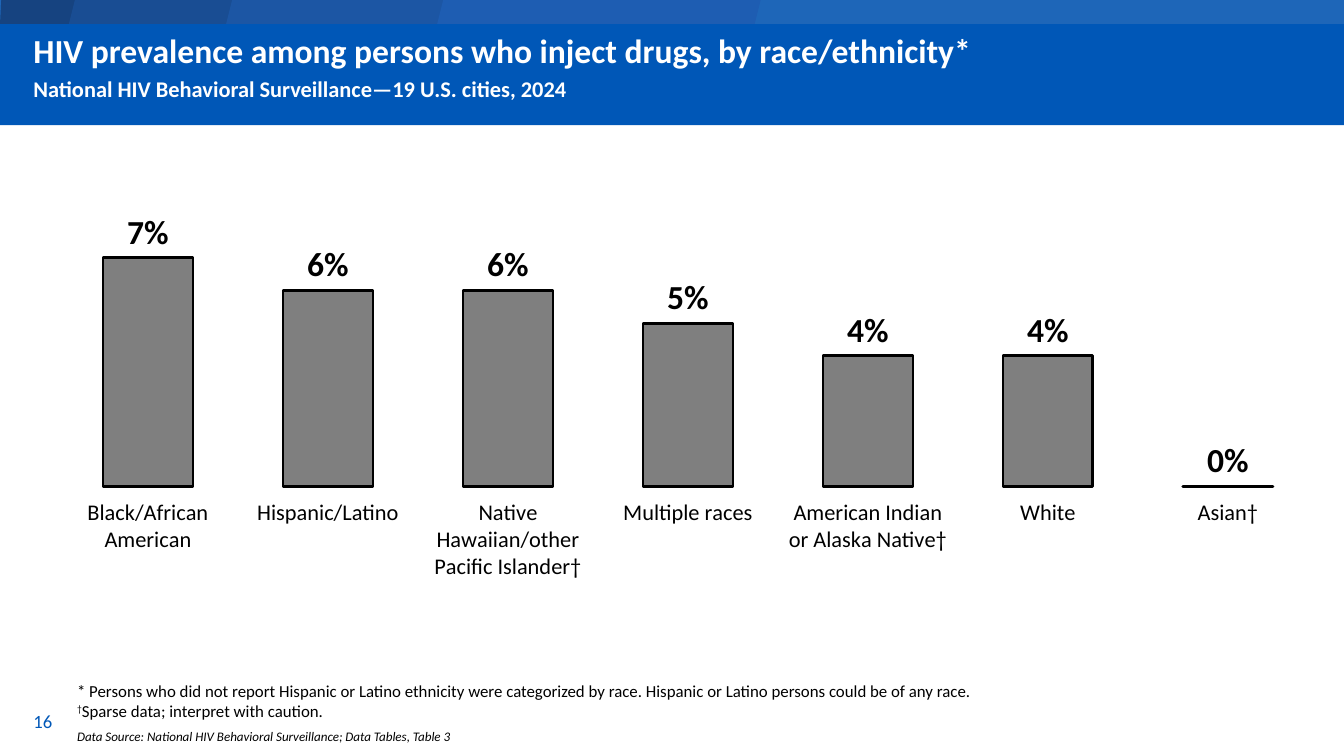
from lxml import etree
from pptx import Presentation
from pptx import util as u
from pptx.chart import data as chart_data
from pptx.dml.color import RGBColor
from pptx.enum import chart as charts, shapes, text
from pptx.oxml import ns

WIDTH = u.Inches(10)
HEIGHT = u.Emu(WIDTH * 9 // 16)
FONT = "Calibri"
COLORS = {
    "white": "FFFFFF", "black": "000000", "bar": "7F7F7F", "header": "0057B7",
    "strip": "1E66B8", "band1": "164380", "band2": "194D93",
    "band3": "1C56A4", "band4": "1E5DB2",
}
STRIP_HEIGHT = 3.38
BANDS = [(5.1, 15.3, "band2"), (16.8, 20, "band3"), (32.5, 24.1, "band4")]
PREVALENCE = {
    "Black/African American": 0.07,
    "Hispanic/Latino": 0.06,
    "Native Hawaiian/other Pacific Islander†": 0.06,
    "Multiple races": 0.05,
    "American Indian or Alaska Native†": 0.04,
    "White": 0.04,
    "Asian†": 0,
}


def color(name):
    return RGBColor.from_string(COLORS[name])


def percent_box(left, top, width, height):
    return (int(WIDTH * left / 100), int(HEIGHT * top / 100),
            int(WIDTH * width / 100), int(HEIGHT * height / 100))


def paint(shape, fill):
    shape.shadow.inherit = False
    shape.fill.solid()
    shape.fill.fore_color.rgb = color(fill)
    shape.line.fill.background()


def add_block(slide, kind, box, fill):
    paint(slide.shapes.add_shape(kind, *percent_box(*box)), fill)


def add_corner(slide):
    points = [percent_box(x, y, 0, 0)[:2]
              for x, y in [(0, STRIP_HEIGHT), (0.1, 0), (8, 0), (7.4, STRIP_HEIGHT)]]
    builder = slide.shapes.build_freeform(*points[0])
    builder.add_line_segments(points[1:], close=True)
    paint(builder.convert_to_shape(), "band1")


def add_header(slide):
    add_block(slide, shapes.MSO_SHAPE.RECTANGLE, (0, 0, 100, STRIP_HEIGHT), "strip")
    add_corner(slide)
    for left, width, fill in BANDS:
        add_block(slide, shapes.MSO_SHAPE.PARALLELOGRAM,
                  (left, 0, width, STRIP_HEIGHT), fill)
    add_block(slide, shapes.MSO_SHAPE.RECTANGLE, (0, 3.2, 100, 13.35), "header")


def style_font(font, size, fill, bold=False, italic=False):
    font.name = FONT
    font.size = u.Pt(size)
    font.bold = bold
    font.italic = italic
    font.color.rgb = color(fill)


def add_text(slide, box, fill, paragraphs, wrap=True,
             anchor=text.MSO_ANCHOR.TOP, bold=False, italic=False):
    frame = slide.shapes.add_textbox(*percent_box(*box)).text_frame
    frame.word_wrap = wrap
    frame.vertical_anchor = anchor
    for index, (size, space_before, runs) in enumerate(paragraphs):
        paragraph = frame.add_paragraph() if index else frame.paragraphs[0]
        if space_before:
            paragraph.space_before = u.Pt(space_before)
        for words, raised in runs:
            run = paragraph.add_run()
            run.text = words
            style_font(run.font, size, fill, bold, italic)
            if raised:
                run.font._element.set("baseline", "30000")


def set_plot_layout(chart, **shares):
    plot_area = chart._chartSpace.chart.plotArea
    for old in plot_area.findall(ns.qn("c:layout")):
        plot_area.remove(old)
    layout = etree.Element(ns.qn("c:layout"))
    manual = etree.SubElement(layout, ns.qn("c:manualLayout"))
    settings = {"layoutTarget": "inner", "xMode": "edge", "yMode": "edge", **shares}
    for tag, value in settings.items():
        etree.SubElement(manual, ns.qn("c:" + tag)).set("val", str(value))
    plot_area.insert(0, layout)


def add_prevalence_chart(slide):
    data = chart_data.CategoryChartData(number_format="0%")
    data.categories = list(PREVALENCE)
    data.add_series("Series 1", list(PREVALENCE.values()))
    chart = slide.shapes.add_chart(
        charts.XL_CHART_TYPE.COLUMN_CLUSTERED,
        *percent_box(3.35, 18.5, 96.65, 66.5), data).chart
    chart.has_legend = False
    chart.has_title = False
    style_font(chart.font, 10, "black")
    set_plot_layout(chart, x=0.01, y=0.04, w=0.97, h=0.65)

    chart.category_axis.format.line.fill.background()
    style_font(chart.category_axis.tick_labels.font, 12, "black")
    value_axis = chart.value_axis
    value_axis.minimum_scale, value_axis.maximum_scale = 0, 0.1
    value_axis.major_unit = 0.2
    value_axis.has_major_gridlines = False
    value_axis.visible = False

    plot = chart.plots[0]
    plot.gap_width = 100
    plot.vary_by_categories = False
    series = plot.series[0]
    series.format.fill.solid()
    series.format.fill.fore_color.rgb = color("bar")
    series.format.line.color.rgb = color("black")
    series.format.line.width = u.Pt(1.5)
    labels = series.data_labels
    labels.show_value = True
    labels.position = charts.XL_LABEL_POSITION.OUTSIDE_END
    labels.number_format = "0%"
    labels.number_format_is_linked = False
    style_font(labels.font, 18, "black", bold=True)


def main():
    presentation = Presentation()
    presentation.slide_width, presentation.slide_height = WIDTH, HEIGHT
    slide = presentation.slides.add_slide(presentation.slide_layouts[6])
    add_header(slide)
    add_text(slide, (1.5, 3.1, 75.6, 12.28), "white", [
        (18, 0, [("HIV prevalence among persons who inject drugs, by race/ethnicity*", False)]),
        (12, 2.4, [("National HIV Behavioral Surveillance—19 U.S. cities, 2024", False)]),
    ], bold=True)
    add_prevalence_chart(slide)
    add_text(slide, (4.75, 89.1, 69.9, 7.12), "black", [
        (9, 0, [("* Persons who did not report Hispanic or Latino ethnicity were categorized "
                 "by race. Hispanic or Latino persons could be of any race.", False)]),
        (9, 0, [("†", True), ("Sparse data; interpret with caution.", False)]),
    ], wrap=False)
    add_text(slide, (1.5, 92.7, 22.5, 5.34), "header",
             [(10, 0, [("16", False)])], anchor=text.MSO_ANCHOR.MIDDLE)
    add_text(slide, (4.75, 95.5, 31.7, 3.91), "black", [
        (7, 0, [("Data Source: National HIV Behavioral Surveillance; Data Tables, Table 3", False)]),
    ], italic=True)
    presentation.save("out.pptx")


if __name__ == "__main__":
    main()
